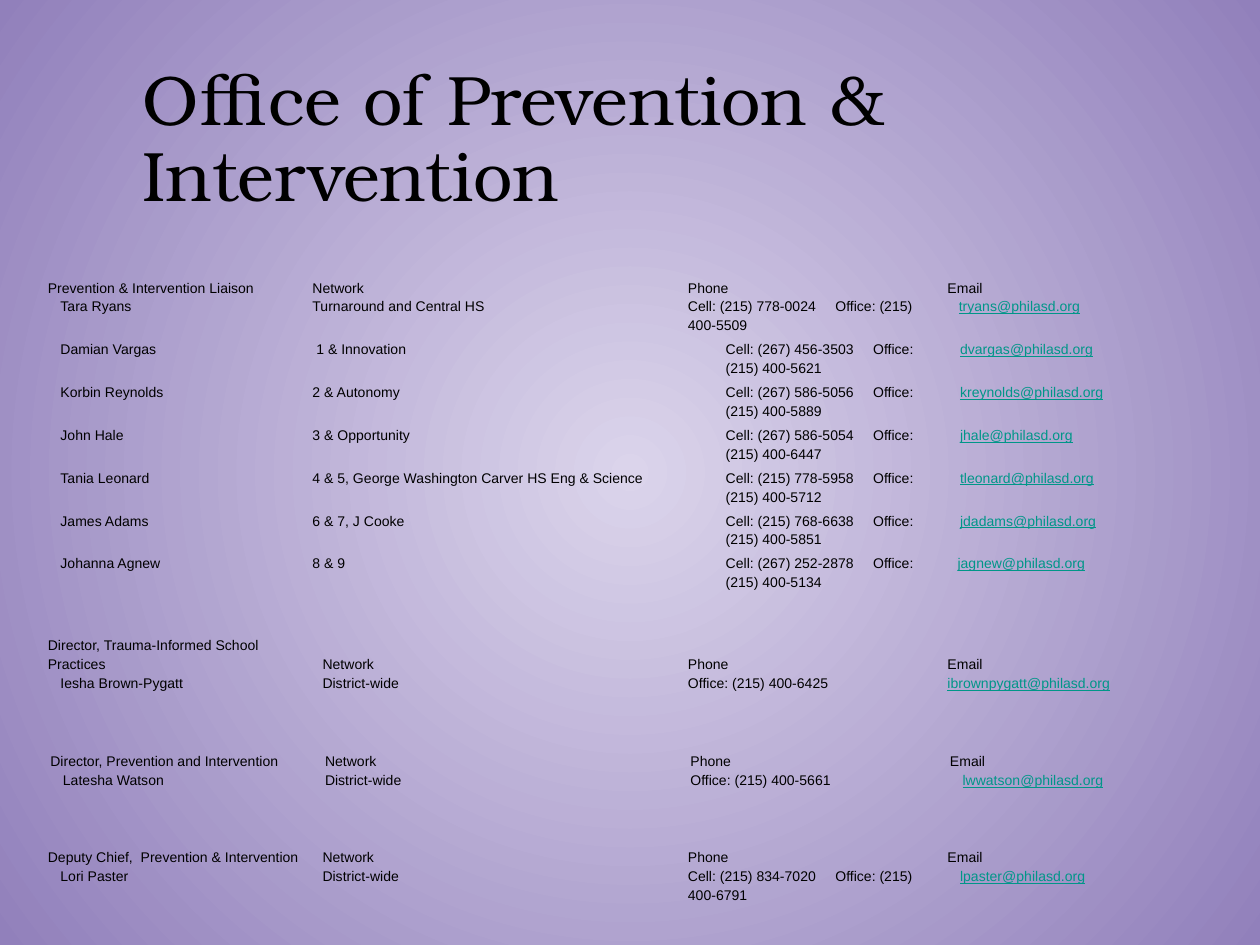
from lxml.etree import SubElement
from pptx import Presentation
from pptx.dml.color import RGBColor
from pptx.enum.text import MSO_ANCHOR as Anchor
from pptx.oxml.ns import qn
from pptx.util import Inches, Pt

BLACK = RGBColor(0x00, 0x00, 0x00)
TEAL = RGBColor(0x00, 0x96, 0x88)
LILAC = RGBColor(0xDB, 0xD4, 0xEB)
VIOLET = RGBColor(0x91, 0x80, 0xBB)

NO_STYLE = "{2D5ABB26-0587-4C30-8999-92F81FD0307C}"
LIAISON_COLUMNS = (2.1, 2.98, 2.06, 2.18)
LEADER_COLUMNS = (2.18, 2.9, 2.06, 2.18)
CELL_INSET = 0.09
OFFICE_TAB = 1.17

# Name, network, phone, email, phone indent, email indent
LIAISONS = [
    ("Tara Ryans", "Turnaround and Central HS",
     "Cell: (215) 778-0024\tOffice: (215) 400-5509", "tryans@philasd.org", 0, 0.09),
    ("Damian Vargas", " 1 & Innovation",
     "Cell: (267) 456-3503\tOffice: (215) 400-5621", "dvargas@philasd.org", 0.3, 0.1),
    ("Korbin Reynolds", "2 & Autonomy",
     "Cell: (267) 586-5056\tOffice: (215) 400-5889", "kreynolds@philasd.org", 0.3, 0.1),
    ("John Hale", "3 & Opportunity",
     "Cell: (267) 586-5054\tOffice: (215) 400-6447", "jhale@philasd.org", 0.3, 0.1),
    ("Tania Leonard", "4 & 5, George Washington Carver HS Eng & Science",
     "Cell: (215) 778-5958\tOffice: (215) 400-5712", "tleonard@philasd.org", 0.3, 0.1),
    ("James Adams", "6 & 7, J Cooke",
     "Cell: (215) 768-6638\tOffice: (215) 400-5851", "jdadams@philasd.org", 0.3, 0.1),
    ("Johanna Agnew", "8 & 9",
     "Cell: (267) 252-2878\tOffice: (215) 400-5134", "jagnew@philasd.org", 0.3, 0.08),
]
PREVENTION_DIRECTOR = ("Latesha Watson", "District-wide", "Office: (215) 400-5661",
                       "lwwatson@philasd.org", 0, 0.1)
TRAUMA_DIRECTOR = ("Iesha Brown-Pygatt", "District-wide", "Office: (215) 400-6425",
                   "ibrownpygatt@philasd.org", 0, 0)
DEPUTY_CHIEF = ("Lori Paster", "District-wide",
                "Cell: (215) 834-7020\tOffice: (215) 400-6791",
                "lpaster@philasd.org", 0, 0.1)


class ContactSlide:
    title_font = "TeX Gyre Bonum"
    body_font = "Arial"

    def __init__(self, slide):
        self.slide = slide

    def background(self, center, edge):
        """Fill the slide with a circular gradient."""
        fill = self.slide.background.fill
        fill.gradient()
        for stop, color in zip(fill.gradient_stops, (center, edge)):
            stop.color.rgb = color
        gradient = self.slide.element.find(".//" + qn("a:gradFill"))
        gradient.remove(gradient.find(qn("a:lin")))
        circle = SubElement(gradient, qn("a:path"), {"path": "circle"})
        SubElement(circle, qn("a:fillToRect"), dict.fromkeys("ltrb", "50000"))

    def style_text(self, paragraph, font_name, size, color, underline=False):
        for run in paragraph.runs:
            font = run.font
            font.name, font.size = font_name, Pt(size)
            font.color.rgb = color
            font.underline = underline

    def title(self, text, left, top, width, height):
        box = self.slide.shapes.add_textbox(
            Inches(left), Inches(top), Inches(width), Inches(height))
        frame = box.text_frame
        frame.word_wrap = True
        frame.margin_left = frame.margin_right = Inches(0.1)
        frame.margin_top = frame.margin_bottom = Inches(0.1)
        frame.text = text
        heading = frame.paragraphs[0]
        heading.line_spacing = 0.9
        self.style_text(heading, self.title_font, 40, BLACK)

    def cell(self, cell, text, indent=0, anchor=Anchor.TOP, after=6, link=False):
        cell.fill.background()
        cell.vertical_anchor = anchor
        cell.margin_left = Inches(CELL_INSET + indent)
        cell.margin_right = Inches(CELL_INSET)
        cell.margin_top = cell.margin_bottom = 0
        paragraph = cell.text_frame.paragraphs[0]
        paragraph.text = text
        paragraph.line_spacing = 1.2
        paragraph.space_before, paragraph.space_after = Pt(6), Pt(after)
        if "\t" in text:
            stops = SubElement(paragraph._p.get_or_add_pPr(), qn("a:tabLst"))
            SubElement(stops, qn("a:tab"), {"pos": str(Inches(OFFICE_TAB)), "algn": "l"})
        self.style_text(paragraph, self.body_font, 8, TEAL if link else BLACK, link)

    def contacts(self, role, people, left, top, columns, heights):
        table = self.slide.shapes.add_table(
            len(people) + 1, len(columns), Inches(left), Inches(top),
            Inches(sum(columns)), Inches(sum(heights))).table
        table.first_row = table.horz_banding = False
        table._tbl.tblPr.find(qn("a:tableStyleId")).text = NO_STYLE
        for column, width in zip(table.columns, columns):
            column.width = Inches(width)
        for row, height in zip(table.rows, heights):
            row.height = Inches(height)
        for column, label in enumerate((role, "Network", "Phone", "Email")):
            self.cell(table.cell(0, column), label, anchor=Anchor.BOTTOM)
        for row, person in enumerate(people, start=1):
            name, network, phone, email, phone_indent, email_indent = person
            self.cell(table.cell(row, 0), name, 0.1, after=3)
            self.cell(table.cell(row, 1), network)
            self.cell(table.cell(row, 2), phone, phone_indent, after=3)
            self.cell(table.cell(row, 3), email, email_indent, after=3, link=True)


def main():
    deck = Presentation()
    deck.slide_width, deck.slide_height = Inches(10), Inches(7.5)
    page = ContactSlide(deck.slides.add_slide(deck.slide_layouts[6]))
    page.background(LILAC, VIOLET)
    page.title("Office of Prevention & Intervention", 1.03, 0.42, 8.35, 1.63)
    page.contacts("Prevention & Intervention Liaison", LIAISONS, 0.29, 2.18,
                  LIAISON_COLUMNS, [0.17] + [0.34] * len(LIAISONS))
    page.contacts("Director, Prevention and Intervention", [PREVENTION_DIRECTOR],
                  0.31, 5.77, LEADER_COLUMNS, [0.34, 0.17])
    page.contacts("Director, Trauma-Informed School Practices", [TRAUMA_DIRECTOR],
                  0.29, 5, LEADER_COLUMNS, [0.34, 0.12])
    page.contacts("Deputy Chief,  Prevention & Intervention", [DEPUTY_CHIEF],
                  0.29, 6.53, LEADER_COLUMNS, [0.34, 0.34])
    deck.save("out.pptx")


if __name__ == "__main__":
    main()
